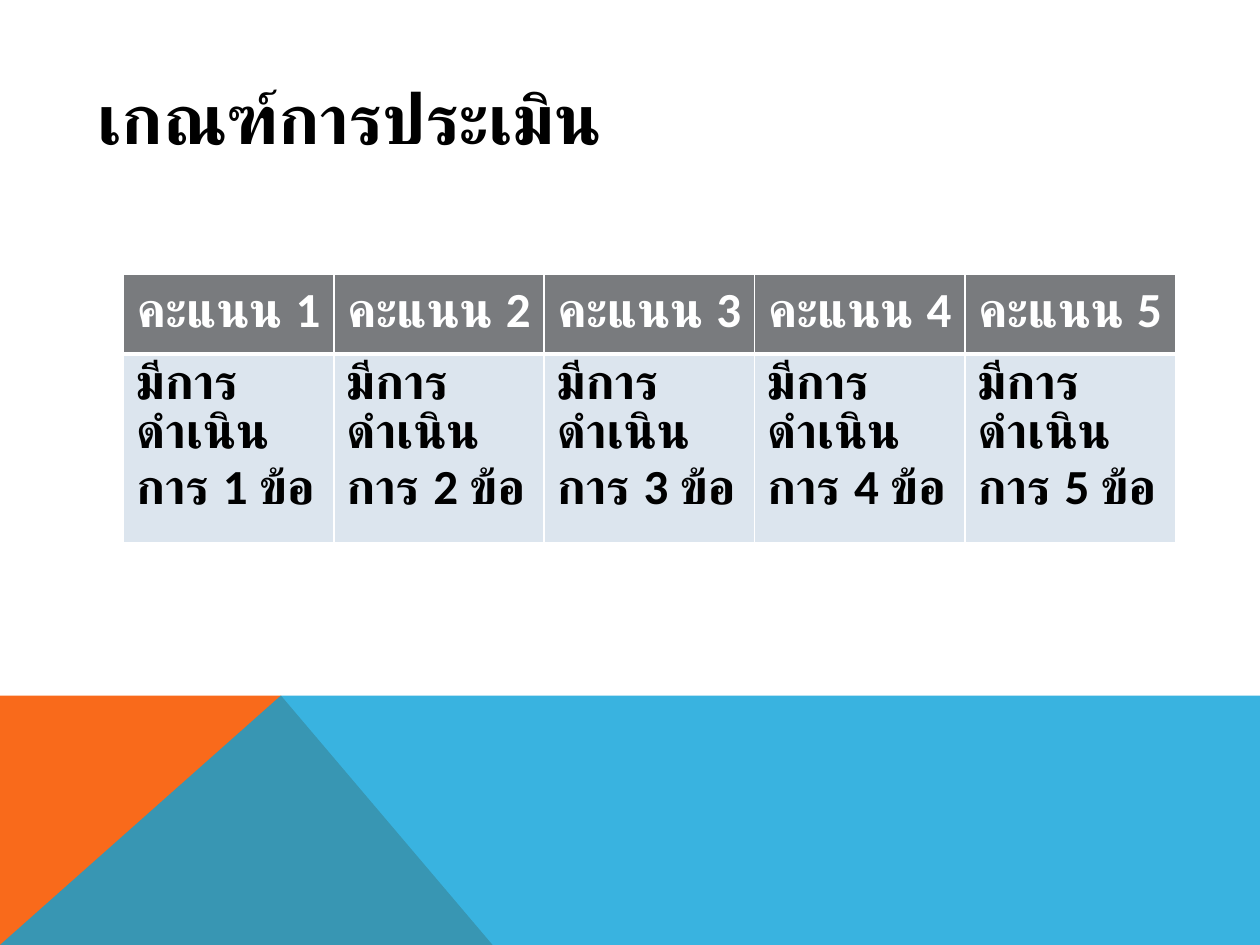
from dataclasses import dataclass

from lxml import etree
from pptx import Presentation
from pptx.dml.color import RGBColor
from pptx.enum import text
from pptx.oxml import ns
from pptx.util import Inches, Pt


@dataclass(frozen=True)
class Theme:
    orange: str = "F96A1B"
    blue: str = "08A1D9"
    blue_opacity: int = 80
    header: str = "797B7E"
    body: str = "DCE5EE"
    light: str = "FFFFFF"
    dark: str = "000000"
    title_font: str = "Lato"
    table_font: str = "Calibri"
    title_size: int = 40
    table_size: int = 28
    thin_rule: int = 1
    thick_rule: int = 3


THEME = Theme()
SCORES = range(1, 6)


def set_fill(part, color):
    part.fill.solid()
    part.fill.fore_color.rgb = RGBColor.from_string(color)


def style_paragraph(paragraph, font, size, color, align):
    paragraph.alignment = align
    paragraph.font.name = font
    paragraph.font.size = Pt(size)
    paragraph.font.bold = True
    paragraph.font.color.rgb = RGBColor.from_string(color)


def add_polygon(slide, points, color):
    corners = [(Inches(x), Inches(y)) for x, y in points]
    builder = slide.shapes.build_freeform(*corners[0])
    builder.add_line_segments(corners[1:], close=True)
    polygon = builder.convert_to_shape()
    polygon.shadow.inherit = False
    polygon.line.fill.background()
    set_fill(polygon, color)
    return polygon


def add_footer(slide, left, top, width, height):
    right, bottom = left + width, top + height
    peak, foot = left + 2.23, left + 3.91
    add_polygon(slide, [(left, bottom), (left, top), (peak, top), (foot, bottom)], THEME.orange)
    band = add_polygon(
        slide, [(left, bottom), (peak, top), (right, top), (right, bottom)], THEME.blue
    )
    tint = band.fill._xPr.find(".//" + ns.qn("a:srgbClr"))
    etree.SubElement(tint, ns.qn("a:alpha"), val=str(THEME.blue_opacity * 1000))


def place_title(slide, left, top, width, height):
    title = slide.shapes.title
    title.left, title.top = Inches(left), Inches(top)
    title.width, title.height = Inches(width), Inches(height)
    frame = title.text_frame
    frame.text = "เกณฑ์การประเมิน"
    frame.vertical_anchor = text.MSO_ANCHOR.MIDDLE
    style_paragraph(
        frame.paragraphs[0], THEME.title_font, THEME.title_size, THEME.dark, text.PP_ALIGN.LEFT
    )


def set_borders(cell, top, bottom):
    properties = cell._tc.get_or_add_tcPr()
    rules = {"lnL": THEME.thin_rule, "lnR": THEME.thin_rule, "lnT": top, "lnB": bottom}
    for position, (side, points) in enumerate(rules.items()):
        line = etree.Element(ns.qn(f"a:{side}"), w=str(Pt(points)))
        paint = etree.SubElement(line, ns.qn("a:solidFill"))
        etree.SubElement(paint, ns.qn("a:srgbClr"), val=THEME.light)
        properties.insert(position, line)


def fill_cell(cell, words, fill, color, align, top, bottom):
    cell.text = words
    set_fill(cell, fill)
    style_paragraph(
        cell.text_frame.paragraphs[0], THEME.table_font, THEME.table_size, color, align
    )
    set_borders(cell, top, bottom)


def add_score_table(slide, left, top, width, row_heights):
    scores = slide.shapes.add_table(
        len(row_heights), len(SCORES),
        Inches(left), Inches(top), Inches(width), Inches(sum(row_heights)),
    ).table
    for row, height in zip(scores.rows, row_heights):
        row.height = Inches(height)
    for column, score in enumerate(SCORES):
        fill_cell(
            scores.cell(0, column), f"คะแนน {score}", THEME.header, THEME.light,
            text.PP_ALIGN.CENTER, THEME.thin_rule, THEME.thick_rule,
        )
        fill_cell(
            scores.cell(1, column), f"มีการดำเนินการ {score} ข้อ", THEME.body, THEME.dark,
            text.PP_ALIGN.LEFT, THEME.thick_rule, THEME.thin_rule,
        )


def main():
    deck = Presentation()
    deck.slide_width, deck.slide_height = Inches(10), Inches(7.5)
    slide = deck.slides.add_slide(deck.slide_layouts[5])
    add_footer(slide, 0, 5.52, 10, 1.98)
    place_title(slide, 0.67, 0.52, 8.27, 0.81)
    add_score_table(slide, 0.98, 2.18, 8.35, [0.63, 1.5])
    deck.save("out.pptx")


if __name__ == "__main__":
    main()
